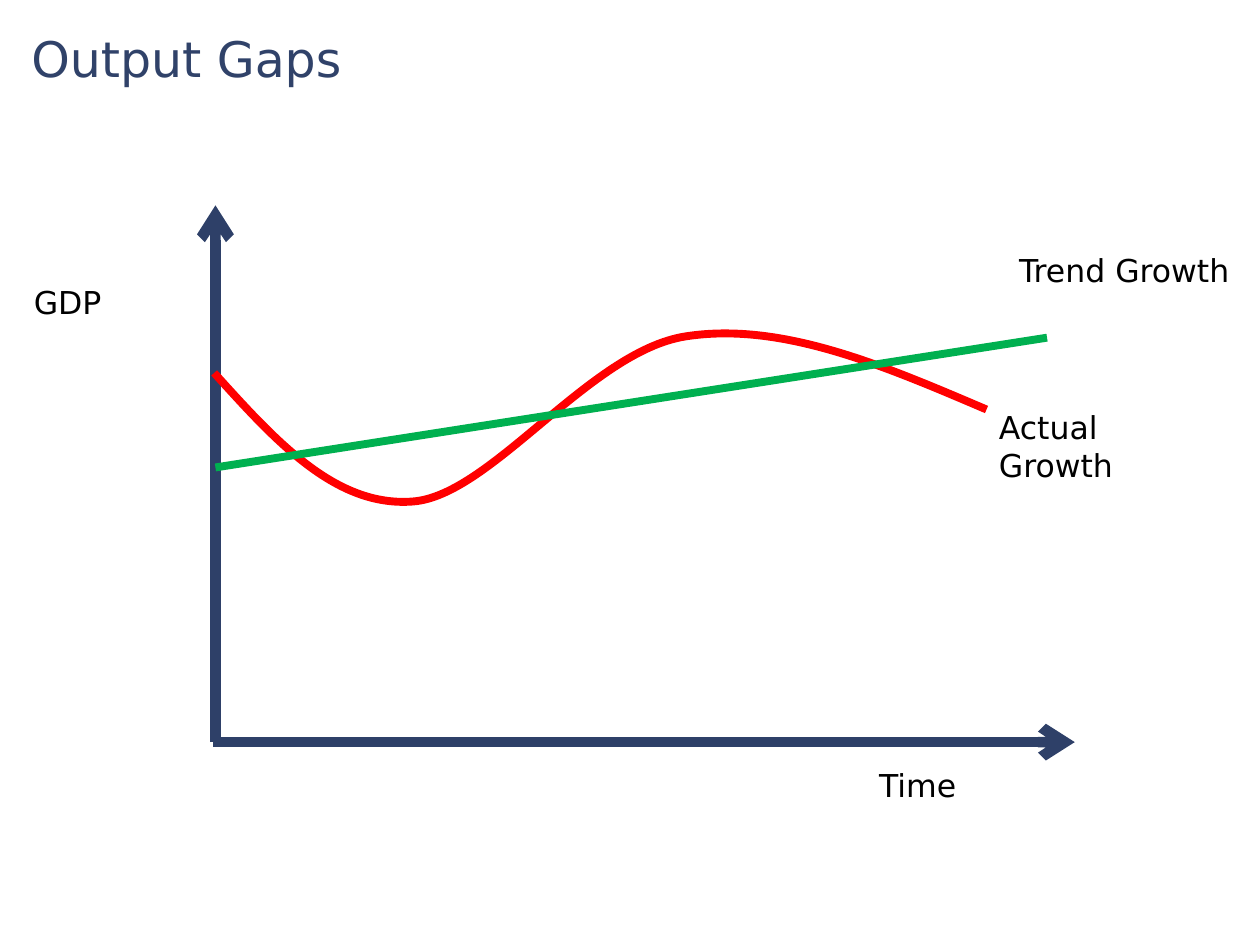
from typing import NamedTuple

from lxml.etree import SubElement
from pptx import Presentation
from pptx.dml.color import RGBColor
from pptx.enum.shapes import MSO_CONNECTOR
from pptx.enum.text import MSO_ANCHOR, MSO_AUTO_SIZE
from pptx.oxml.ns import qn
from pptx.util import Inches, Pt

FONT = "DejaVu Sans"
NAVY, RED, GREEN, BLACK = "2E4068", "FF0000", "00B050", "000000"
TITLE_COLOR = "304269"

Point = tuple[float, float]


class Label(NamedTuple):
    text: str
    left: float
    top: float
    width: float
    height: float
    size: int = 18
    color: str = BLACK


class Line(NamedTuple):
    start: Point
    end: Point
    color: str
    weight: float
    arrow: bool = False


TITLE = Label("Output Gaps", 0.15, 0, 9.3, 0.92, 28, TITLE_COLOR)
LABELS = [
    Label("Actual Growth", 7.83, 3.19, 1.89, 0.71),
    Label("Trend Growth", 7.99, 1.94, 1.89, 0.71),
    Label("GDP", 0.17, 2.2, 1.42, 0.4),
    Label("Time", 6.88, 6.03, 1.1, 0.4),
]
AXES = [
    Line((1.71, 5.89), (1.71, 1.63), NAVY, 6, arrow=True),
    Line((1.69, 5.89), (8.53, 5.89), NAVY, 6, arrow=True),
]
TREND = Line((1.71, 3.71), (8.31, 2.68), GREEN, 4.5)
ACTUAL_START = (1.7, 2.96)
ACTUAL_CURVES = [
    ((2.18, 3.49), (2.66, 4.03), (3.28, 3.98)),
    ((3.9, 3.93), (4.68, 2.79), (5.44, 2.67)),
    ((6.2, 2.55), (7.01, 2.9), (7.83, 3.25)),
]


def rgb(color: str) -> RGBColor:
    return RGBColor.from_string(color)


def add_label(shapes, label: Label):
    box = shapes.add_textbox(*map(Inches, label[1:5]))
    tf = box.text_frame
    tf.word_wrap = True
    tf.text = label.text
    font = tf.paragraphs[0].runs[0].font
    font.name, font.size = FONT, Pt(label.size)
    font.color.rgb = rgb(label.color)
    return box


def add_line(shapes, line: Line) -> None:
    cxn = shapes.add_connector(
        MSO_CONNECTOR.STRAIGHT, *map(Inches, line.start + line.end)
    )
    cxn.line.color.rgb = rgb(line.color)
    cxn.line.width = Pt(line.weight)
    if line.arrow:
        SubElement(cxn.line._get_or_add_ln(), qn("a:tailEnd"), type="arrow")
    SubElement(cxn._element.spPr, qn("a:effectLst"))


def add_curve(shapes, start: Point, curves, color: str, weight: float) -> None:
    """Draw a freeform through the curve ends, then bend each segment."""
    builder = shapes.build_freeform(*map(Inches, start), scale=1.0)
    builder.add_line_segments(
        [tuple(map(Inches, curve[-1])) for curve in curves], close=False
    )
    sp = builder.convert_to_shape()
    sp.shadow.inherit = False
    sp.fill.background()
    sp.line.color.rgb = rgb(color)
    sp.line.width = Pt(weight)
    for segment, curve in zip(list(sp._element.iter(qn("a:lnTo"))), curves):
        bezier = SubElement(segment.getparent(), qn("a:cubicBezTo"))
        for x, y in curve:
            SubElement(bezier, qn("a:pt"),
                       x=str(Inches(x) - sp.left), y=str(Inches(y) - sp.top))
        segment.getparent().replace(segment, bezier)


def main() -> None:
    prs = Presentation()
    prs.slide_width, prs.slide_height = Inches(10), Inches(7.5)
    shapes = prs.slides.add_slide(prs.slide_layouts[6]).shapes

    title = add_label(shapes, TITLE)
    title.text_frame.vertical_anchor = MSO_ANCHOR.MIDDLE
    for axis in AXES:
        add_line(shapes, axis)
    add_curve(shapes, ACTUAL_START, ACTUAL_CURVES, RED, 4.5)
    add_line(shapes, TREND)
    for label in LABELS:
        box = add_label(shapes, label)
        box.text_frame.auto_size = MSO_AUTO_SIZE.SHAPE_TO_FIT_TEXT

    prs.save("out.pptx")


if __name__ == "__main__":
    main()
